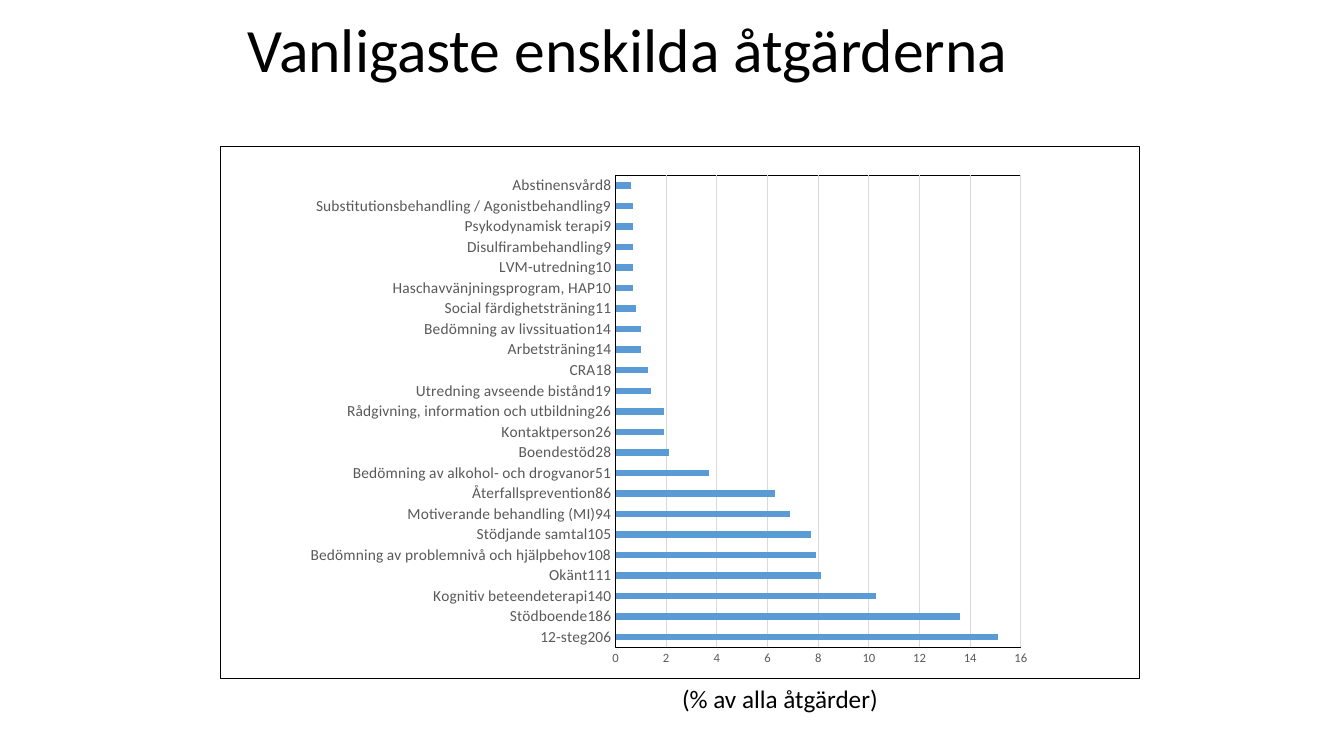
"""Build a slide with a bar chart of the most common individual measures."""
from lxml import etree
from pptx import Presentation
from pptx.chart.data import CategoryChartData
from pptx.dml.color import RGBColor
from pptx.enum.chart import XL_CHART_TYPE, XL_TICK_LABEL_POSITION, XL_TICK_MARK
from pptx.enum.text import MSO_ANCHOR
from pptx.oxml import parse_xml
from pptx.util import Cm, Pt

BAR_CLUSTERED = XL_CHART_TYPE.BAR_CLUSTERED
NO_TICK = XL_TICK_MARK.NONE
NEXT_TO_AXIS = XL_TICK_LABEL_POSITION.NEXT_TO_AXIS
TOP = MSO_ANCHOR.TOP

FONT = "Calibri"
BLACK, GREY, GRID, BLUE = "000000", "595959", "D9D9D9", "5B9BD5"
TITLE = "Vanligaste enskilda åtgärderna"
CAPTION = "(% av alla åtgärder)"
MEASURES = [
    ("12-steg206", 15.1),
    ("Stödboende186", 13.6),
    ("Kognitiv beteendeterapi140", 10.3),
    ("Okänt111", 8.1),
    ("Bedömning av problemnivå och hjälpbehov108", 7.9),
    ("Stödjande samtal105", 7.7),
    ("Motiverande behandling (MI)94", 6.9),
    ("Återfallsprevention86", 6.3),
    ("Bedömning av alkohol- och drogvanor51", 3.7),
    ("Boendestöd28", 2.1),
    ("Kontaktperson26", 1.9),
    ("Rådgivning, information och utbildning26", 1.9),
    ("Utredning avseende bistånd19", 1.4),
    ("CRA18", 1.3),
    ("Arbetsträning14", 1),
    ("Bedömning av livssituation14", 1),
    ("Social färdighetsträning11", 0.8),
    ("Haschavvänjningsprogram, HAP10", 0.7),
    ("LVM-utredning10", 0.7),
    ("Disulfirambehandling9", 0.7),
    ("Psykodynamisk terapi9", 0.7),
    ("Substitutionsbehandling / Agonistbehandling9", 0.7),
    ("Abstinensvård8", 0.6),
]
TITLE_BOX = (5.99, 0.36, 21.9, 3.32)
CHART_BOX = (5.54, 3.68, 23.19, 13.44)
CAPTION_BOX = (16.94, 17.1, 5.51, 1.02)
PLOT = {"x": 0.43, "y": 0.054, "w": 0.441, "h": 0.887}

CHART_NS = "http://schemas.openxmlformats.org/drawingml/2006/chart"
DRAWING_NS = "http://schemas.openxmlformats.org/drawingml/2006/main"


def rgb(hex_color):
    return RGBColor.from_string(hex_color)


def style_font(font, size, color):
    font.name = FONT
    font.size = Pt(size)
    font.color.rgb = rgb(color)


def style_line(line, color):
    line.color.rgb = rgb(color)
    line.width = Pt(0.75)


def add_text(slide, box, text, size, wrap):
    text_frame = slide.shapes.add_textbox(*map(Cm, box)).text_frame
    text_frame.word_wrap = wrap
    text_frame.vertical_anchor = TOP
    text_frame.text = text
    paragraph = text_frame.paragraphs[0]
    style_font(paragraph.runs[0].font, size, BLACK)
    return paragraph


def chart_tag(name):
    return f"{{{CHART_NS}}}{name}"


def border():
    return parse_xml(
        f'<c:spPr xmlns:c="{CHART_NS}" xmlns:a="{DRAWING_NS}"><a:noFill/>'
        f'<a:ln w="{Pt(0.75)}"><a:solidFill><a:srgbClr val="{BLACK}"/></a:solidFill></a:ln></c:spPr>'
    )


def place_plot(plot_area):
    for old_layout in plot_area.findall(chart_tag("layout")):
        plot_area.remove(old_layout)
    layout = etree.Element(chart_tag("layout"))
    manual = etree.SubElement(layout, chart_tag("manualLayout"))
    settings = {"layoutTarget": "inner", "xMode": "edge", "yMode": "edge", **PLOT}
    for name, value in settings.items():
        etree.SubElement(manual, chart_tag(name), val=str(value))
    plot_area.insert(0, layout)
    plot_area.append(border())


def add_measures_chart(slide):
    data = CategoryChartData()
    data.categories = [name for name, share in MEASURES]
    data.add_series("Series 1", [share for name, share in MEASURES])
    chart = slide.shapes.add_chart(BAR_CLUSTERED, *map(Cm, CHART_BOX), data).chart
    chart.has_title = False
    chart.has_legend = False
    style_font(chart.font, 10, BLACK)

    plot = chart.plots[0]
    plot.gap_width = 219
    plot.vary_by_categories = False
    series_fill = plot.series[0].format.fill
    series_fill.solid()
    series_fill.fore_color.rgb = rgb(BLUE)

    for axis, size in ((chart.category_axis, 11), (chart.value_axis, 9)):
        axis.major_tick_mark = NO_TICK
        axis.minor_tick_mark = NO_TICK
        axis.tick_label_position = NEXT_TO_AXIS
        style_font(axis.tick_labels.font, size, GREY)
    style_line(chart.category_axis.format.line, BLACK)

    value_axis = chart.value_axis
    value_axis.minimum_scale, value_axis.maximum_scale = 0, 16
    value_axis.major_unit = 2
    value_axis.has_major_gridlines = True
    style_line(value_axis.major_gridlines.format.line, GRID)
    value_axis.format.line.fill.background()
    value_axis.tick_labels.number_format = "#,##0"
    value_axis.tick_labels.number_format_is_linked = False

    chart_body = chart.element.find(chart_tag("chart"))
    place_plot(chart_body.find(chart_tag("plotArea")))
    chart_body.addnext(border())


def main():
    presentation = Presentation()
    presentation.slide_width, presentation.slide_height = Cm(33.87), Cm(19.05)
    slide = presentation.slides.add_slide(presentation.slide_layouts[6])
    title = add_text(slide, TITLE_BOX, TITLE, 44, True)
    title.line_spacing = 0.9
    add_measures_chart(slide)
    add_text(slide, CAPTION_BOX, CAPTION, 18, False)
    presentation.save("out.pptx")


if __name__ == "__main__":
    main()
